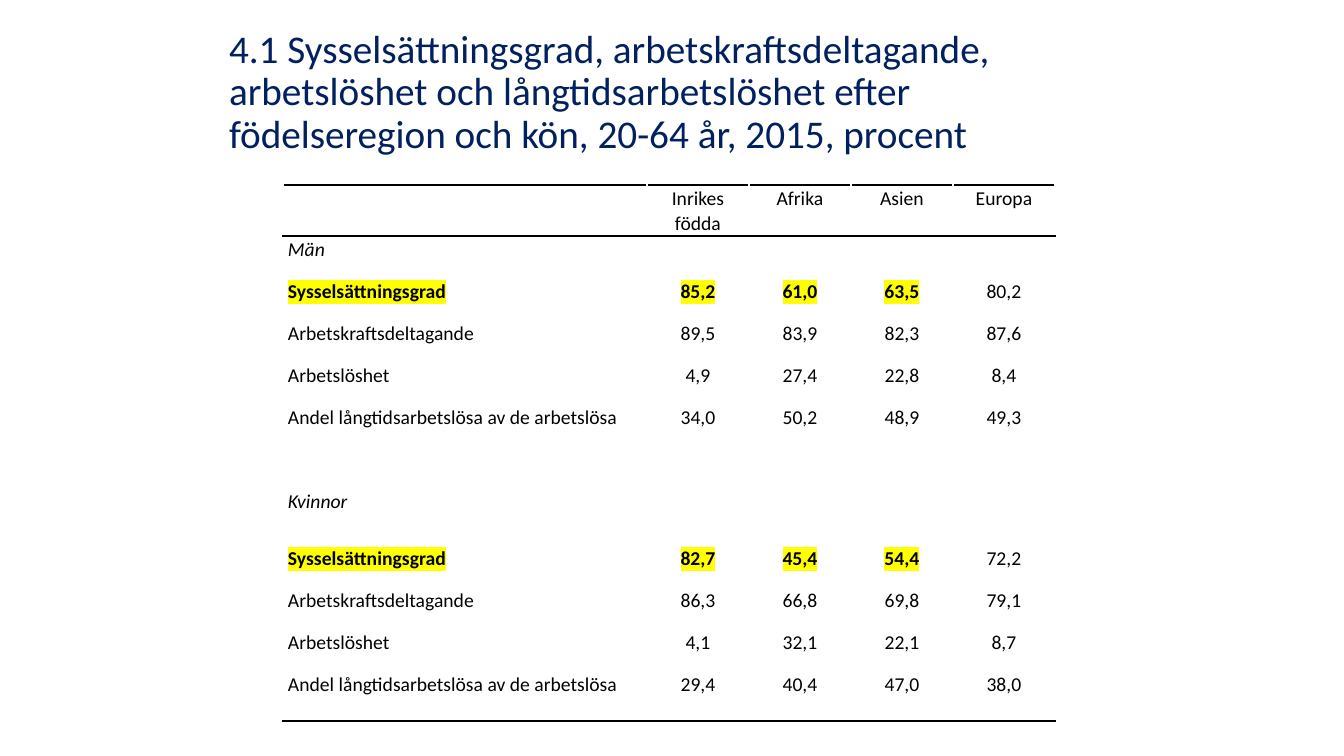
from lxml.etree import SubElement
from pptx import Presentation
from pptx.dml.color import RGBColor
from pptx.enum.text import MSO_ANCHOR, MSO_AUTO_SIZE, PP_ALIGN as AL
from pptx.oxml.ns import qn
from pptx.util import Pt

EMU_PER_PX = 914400 / 100.8
COLORS = {"title": "002060", "text": "000000", "rule": "000000", "mark": "FFFF00"}

TITLE = ("4.1 Sysselsättningsgrad, arbetskraftsdeltagande, arbetslöshet och "
         "långtidsarbetslöshet efter födelseregion och kön, 20-64 år, 2015, procent")
REGIONS = ["Inrikes födda", "Afrika", "Asien", "Europa"]
MEASURES = ["Sysselsättningsgrad", "Arbetskraftsdeltagande", "Arbetslöshet",
            "Andel långtidsarbetslösa av de arbetslösa"]
MEN = ["85,2 61,0 63,5 80,2", "89,5 83,9 82,3 87,6",
       "4,9 27,4 22,8 8,4", "34,0 50,2 48,9 49,3"]
WOMEN = ["82,7 45,4 54,4 72,2", "86,3 66,8 69,8 79,1",
         "4,1 32,1 22,1 8,7", "29,4 40,4 47,0 38,0"]
COL_WIDTHS = [364] + [102] * 4
ROW_HEIGHTS = [51] + [42] * 6 + [57] + [42] * 3 + [50]


def px(n):
    return round(n * EMU_PER_PX)


def group_rows(group, values):
    return [[group] + [""] * len(REGIONS)] + [
        [name] + line.split() for name, line in zip(MEASURES, values)]


class Deck:
    def __init__(self, font="Calibri"):
        self.font = font
        self.prs = Presentation()
        self.prs.slide_width, self.prs.slide_height = px(1344), px(756)
        self.s = self.prs.slides.add_slide(self.prs.slide_layouts[5])

    def style(self, p, size, color, align, spacing, bold=False, italic=False):
        p.alignment, p.line_spacing = align, spacing
        for r in p.runs:
            f = r.font
            f.name, f.size, f.bold, f.italic = self.font, Pt(size), bold, italic
            f.color.rgb = RGBColor.from_string(COLORS[color])

    def title(self, text, x, y, w, h):
        sp = self.s.shapes.title
        sp.left, sp.top, sp.width, sp.height = px(x), px(y), px(w), px(h)
        tf = sp.text_frame
        tf.text = text
        tf.word_wrap, tf.auto_size = True, MSO_AUTO_SIZE.NONE
        tf.vertical_anchor = MSO_ANCHOR.MIDDLE
        self.style(tf.paragraphs[0], 28, "title", AL.LEFT, 0.9)

    def table(self, rows, x, y):
        frame = self.s.shapes.add_table(len(rows), len(COL_WIDTHS), px(x), px(y),
                                        px(sum(COL_WIDTHS)), px(sum(ROW_HEIGHTS)))
        tbl = frame.table
        tbl.first_row = tbl.horz_banding = False
        for col, w in zip(tbl.columns, COL_WIDTHS):
            col.width = px(w)
        for row, h in zip(tbl.rows, ROW_HEIGHTS):
            row.height = px(h)
        for i, row in enumerate(rows):
            for j, text in enumerate(row):
                cell = tbl.cell(i, j)
                self.cell(cell, text, AL.CENTER if j else AL.LEFT,
                          marked=row[0] == MEASURES[0] and j < len(REGIONS),
                          italic=row[0] in ("Män", "Kvinnor"))
                if i < 2:
                    self.border(cell, "a:lnT")
                if i in (0, len(rows) - 1):
                    self.border(cell, "a:lnB")
                cell.fill.background()

    def cell(self, cell, text, align, marked, italic):
        cell.margin_left = cell.margin_right = px(5)
        cell.margin_top = cell.margin_bottom = 0
        cell.text = text
        p = cell.text_frame.paragraphs[0]
        self.style(p, 14, "text", align, 1.07, marked, italic)
        if marked:
            self.highlight(p.runs[0])

    def highlight(self, r):
        rPr = r.font._element
        mark = SubElement(rPr, qn("a:highlight"))
        SubElement(mark, qn("a:srgbClr"), val=COLORS["mark"])
        rPr.find(qn("a:solidFill")).addnext(mark)

    def border(self, cell, side):
        tcPr = cell._tc.get_or_add_tcPr()
        ln = SubElement(tcPr, qn(side), w=str(Pt(1)))
        fill = SubElement(ln, qn("a:solidFill"))
        SubElement(fill, qn("a:srgbClr"), val=COLORS["rule"])


def main():
    deck = Deck()
    deck.title(TITLE, 219, 30, 906, 126)
    blank = [""] * len(COL_WIDTHS)
    deck.table([[""] + REGIONS, *group_rows("Män", MEN), blank,
                *group_rows("Kvinnor", WOMEN)], 283, 185)
    deck.prs.save("out.pptx")


if __name__ == "__main__":
    main()
